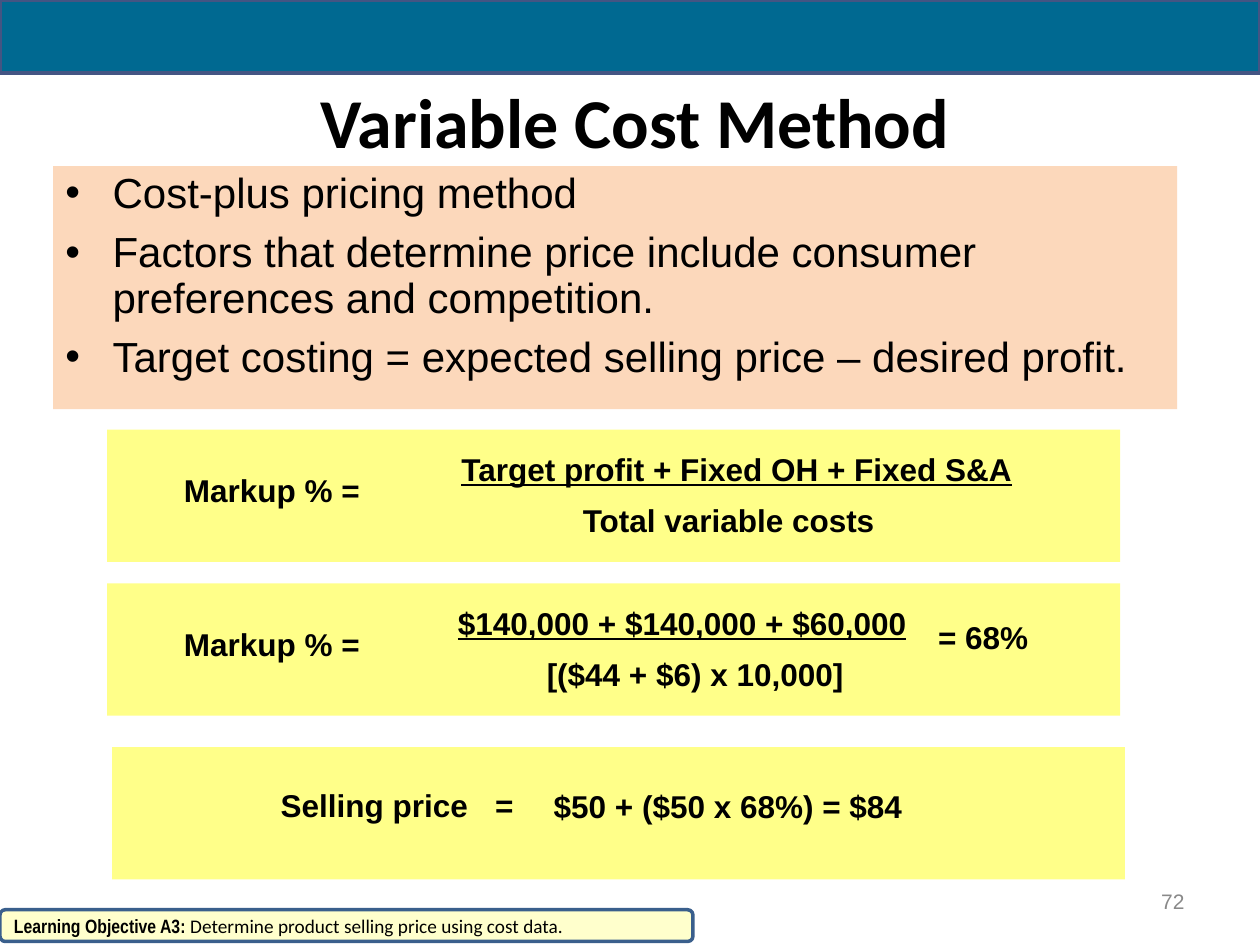
from dataclasses import dataclass

from lxml import etree
from pptx import Presentation
from pptx.dml.color import RGBColor
from pptx.enum import shapes, text
from pptx.oxml.ns import qn
from pptx.util import Cm, Pt


@dataclass(frozen=True)
class Theme:
    black: str = "000000"
    grey: str = "898989"
    header: str = "006991"
    header_line: str = "445583"
    peach: str = "FCD5B5"
    yellow: str = "FFFF89"
    cream: str = "FFFFCC"
    objective_line: str = "3A5F8C"
    heading_font: str = "Calibri"
    body_font: str = "Arial"
    narrow_font: str = "Arial Narrow"
    title_size: int = 40
    body_size: int = 24
    formula_size: int = 18
    number_size: int = 12
    objective_size: int = 11


THEME = Theme()
ALIGN = text.PP_ALIGN
RECT = shapes.MSO_SHAPE.RECTANGLE
PANEL_WIDTH, PANEL_HEIGHT = 20.42, 2.67
LINE_HEIGHT = 1.02


def add_run(paragraph, words, size, font=THEME.body_font, color=THEME.black,
            bold=False, underline=False):
    run = paragraph.add_run()
    run.text = words
    run.font.size = Pt(size)
    run.font.name = font
    run.font.bold = bold
    run.font.underline = underline
    run.font.color.rgb = RGBColor.from_string(color)


def add_panel(parent, box, fill, line=None, line_width=0, kind=RECT):
    panel = parent.add_shape(kind, *map(Cm, box))
    panel.shadow.inherit = False
    panel.fill.solid()
    panel.fill.fore_color.rgb = RGBColor.from_string(fill)
    if line:
        panel.line.color.rgb = RGBColor.from_string(line)
        panel.line.width = Pt(line_width)
    else:
        panel.line.fill.background()
    return panel


def add_label(parent, box, words, align=ALIGN.LEFT, anchor=text.MSO_ANCHOR.TOP,
              size=THEME.formula_size, **style):
    label = parent.add_textbox(*map(Cm, box))
    frame = label.text_frame
    frame.word_wrap = True
    frame.vertical_anchor = anchor
    paragraph = frame.paragraphs[0]
    paragraph.alignment = align
    add_run(paragraph, words, size, **style)
    return paragraph


def add_formula_panel(slide, left, top):
    group = slide.shapes.add_group_shape().shapes
    add_panel(group, (left, top, PANEL_WIDTH, PANEL_HEIGHT), THEME.yellow)
    return group


def add_markup(slide, top, numerator, numerator_width, denominator, denominator_width):
    left = 2.16
    group = add_formula_panel(slide, left, top)
    add_label(group, (left + 1.3, top + 0.71, 4.75, LINE_HEIGHT), "Markup % =", bold=True)
    add_label(group, (left + 5.38, top + 0.29, numerator_width, LINE_HEIGHT),
              numerator, ALIGN.CENTER, bold=True, underline=True)
    add_label(group, (left + 7.26, top + 1.32, denominator_width, LINE_HEIGHT),
              denominator, ALIGN.CENTER, bold=True)


def add_selling_price(slide, left, top):
    group = add_formula_panel(slide, left, top)
    price = add_label(group, (left + 3.15, top + 0.66, 5.38, LINE_HEIGHT),
                      "Selling price\t=", bold=True)
    tabs = etree.SubElement(price._p.get_or_add_pPr(), qn("a:tabLst"))
    etree.SubElement(tabs, qn("a:tab"), pos=str(Cm(4.32)), algn="l")
    add_label(group, (left + 8.15, top + 0.69, 8.53, LINE_HEIGHT),
              "$50 + ($50 x 68%) = $84", ALIGN.CENTER, bold=True)


def add_factors(slide, box, points):
    panel = add_panel(slide.shapes, box, THEME.peach)
    color = panel._element.spPr.find(qn("a:solidFill"))[0]
    etree.SubElement(color, qn("a:alpha"), val="91000")
    frame = panel.text_frame
    frame.word_wrap = True
    frame.vertical_anchor = text.MSO_ANCHOR.TOP
    for index, point in enumerate(points):
        paragraph = frame.add_paragraph() if index else frame.paragraphs[0]
        paragraph.alignment = ALIGN.LEFT
        paragraph.line_spacing = 0.9
        paragraph.space_after = Pt(8)
        properties = paragraph._p.get_or_add_pPr()
        properties.set("marL", str(Cm(0.95)))
        properties.set("indent", str(Cm(-0.95)))
        etree.SubElement(properties, qn("a:buFont"), typeface=THEME.body_font)
        etree.SubElement(properties, qn("a:buChar"), char="•")
        add_run(paragraph, point, THEME.body_size)


def add_objective(slide, box, name, goal):
    panel = add_panel(slide.shapes, box, THEME.cream, THEME.objective_line, 2,
                      shapes.MSO_SHAPE.ROUNDED_RECTANGLE)
    frame = panel.text_frame
    frame.word_wrap = True
    frame.vertical_anchor = text.MSO_ANCHOR.MIDDLE
    paragraph = frame.paragraphs[0]
    paragraph.alignment = ALIGN.LEFT
    add_run(paragraph, name, THEME.objective_size, THEME.narrow_font, bold=True)
    add_run(paragraph, goal, THEME.objective_size, THEME.heading_font)


def main():
    deck = Presentation()
    deck.slide_width, deck.slide_height = Cm(25.4), Cm(19.05)
    slide = deck.slides.add_slide(deck.slide_layouts[6])

    add_panel(slide.shapes, (0, 0, 25.4, 1.47), THEME.header, THEME.header_line, 2.25)
    add_label(slide.shapes, (1.37, 0.84, 22.86, 3.18), "Variable Cost Method",
              ALIGN.CENTER, text.MSO_ANCHOR.MIDDLE, THEME.title_size,
              font=THEME.heading_font, bold=True)
    add_label(slide.shapes, (18.21, 17.65, 5.92, LINE_HEIGHT), "72", ALIGN.RIGHT,
              text.MSO_ANCHOR.MIDDLE, THEME.number_size, color=THEME.grey)
    add_objective(slide, (0, 18.34, 13.97, 0.64), "Learning Objective A3:",
                  " Determine product selling price using cost data.")
    add_factors(slide, (1.07, 3.35, 22.66, 4.9), [
        "Cost-plus pricing method",
        "Factors that determine price include consumer preferences and competition.",
        "Target costing = expected selling price – desired profit.",
    ])
    add_markup(slide, 11.76, "$140,000 + $140,000 + $60,000", 12.42,
               "[($44 + $6) x 10,000]", 9.19)
    add_markup(slide, 8.66, "Target profit + Fixed OH + Fixed S&A", 14.63,
               "Total variable costs", 10.54)
    add_label(slide.shapes, (18.66, 12.34, 3.1, LINE_HEIGHT), "= 68%", bold=True)
    add_selling_price(slide, 2.26, 15.06)

    deck.save("out.pptx")


if __name__ == "__main__":
    main()
